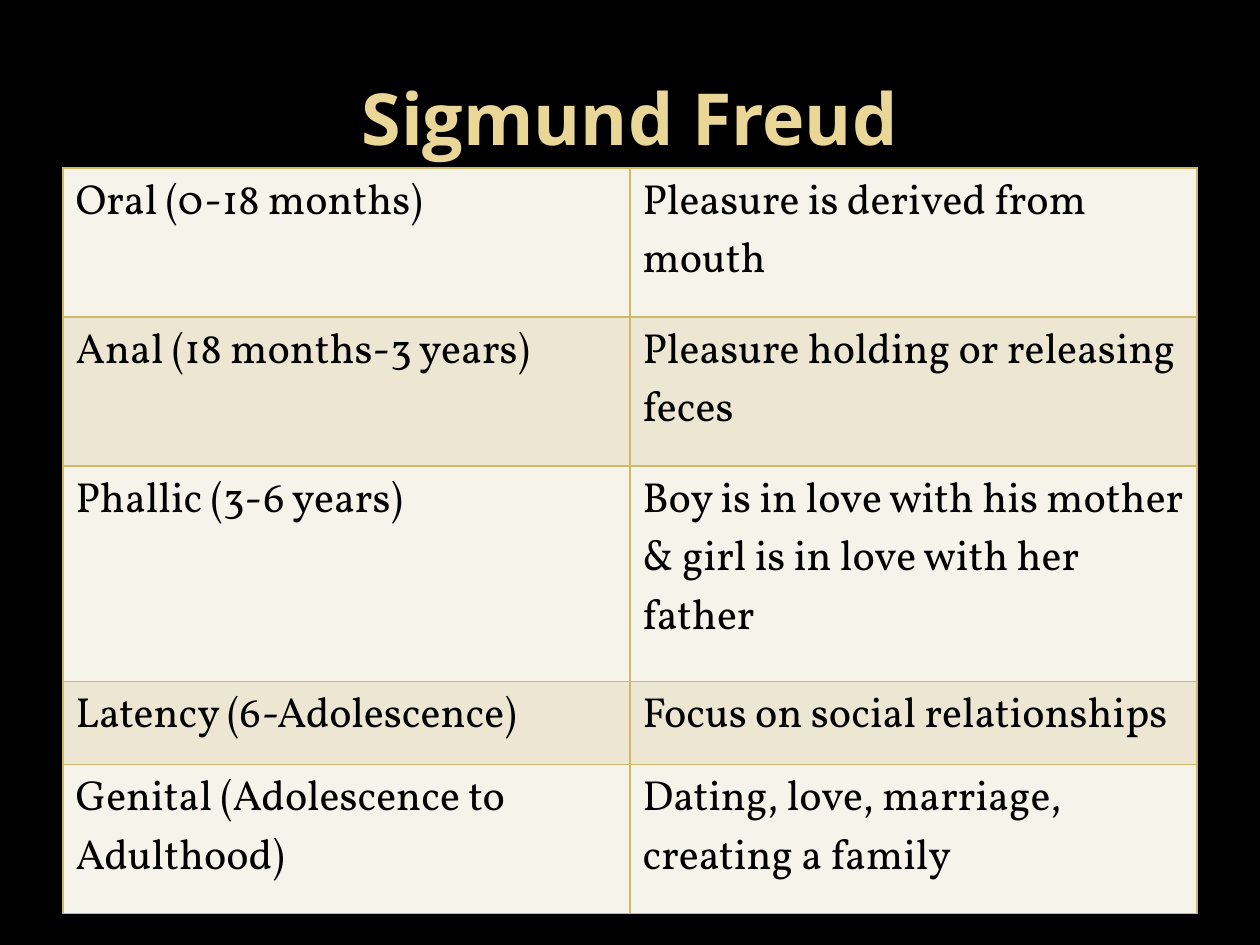
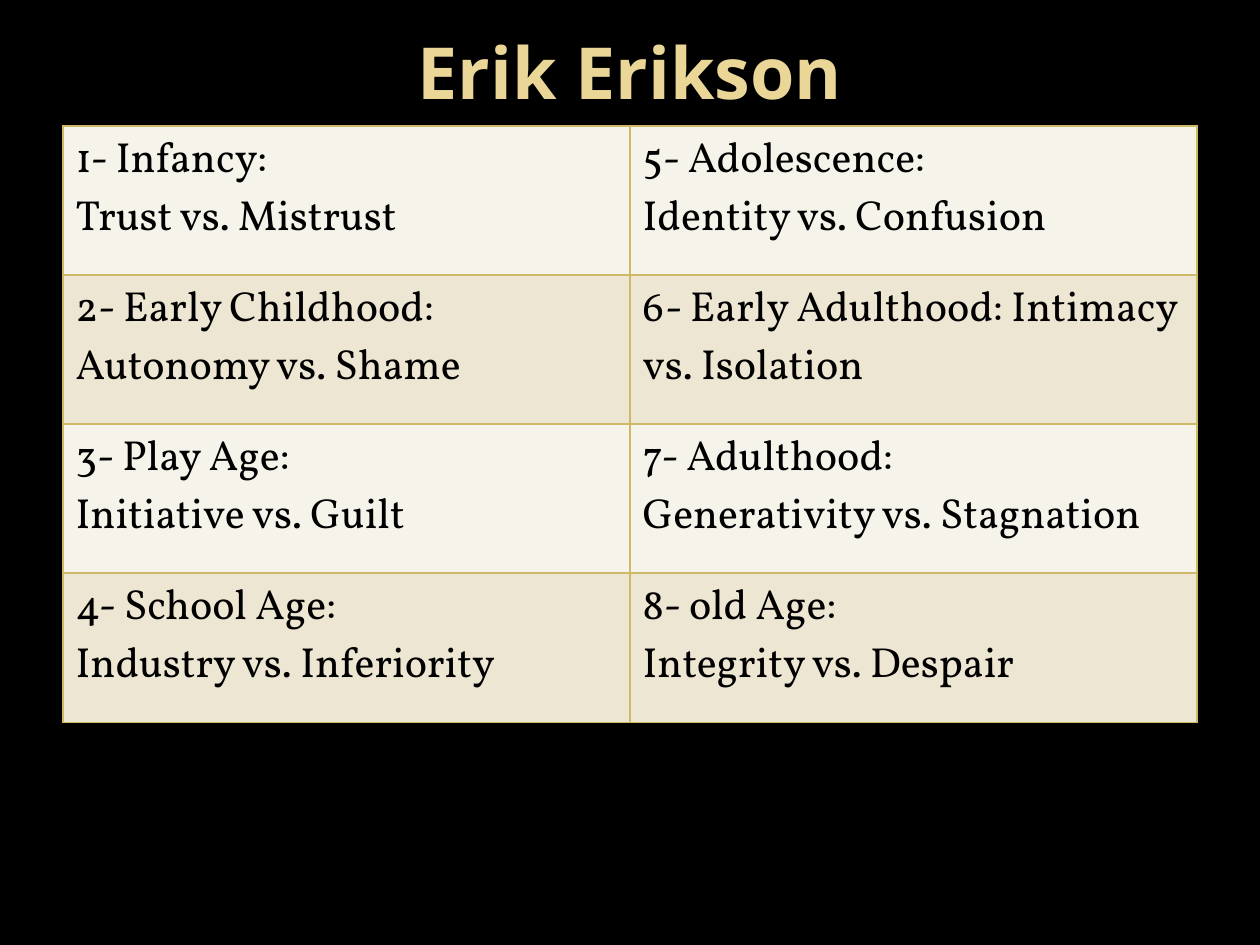
from lxml import etree
from pptx import Presentation
from pptx.dml.color import RGBColor
from pptx.enum import text
from pptx.oxml import ns
from pptx.util import Pt

BLACK = RGBColor(0x00, 0x00, 0x00)
TITLE_GOLD = RGBColor(0xEA, 0xD6, 0x96)
BORDER_GOLD = RGBColor(0xCE, 0xB9, 0x66)
BANDS = (RGBColor(0xF6, 0xF3, 0xEA), RGBColor(0xED, 0xE6, 0xD3))
TITLE_FONT, BODY_FONT = "Open Sans", "Vollkorn"
LEFT, WIDTH = 36, 648
ONE_LINE, TWO_LINES, THREE_LINES = 47.4, 85.2, 123.1

SLIDES = [
    {
        "title": "Sigmund Freud",
        "title_top": 21.6,
        "title_height": 90,
        "table_top": 96,
        "row_heights": [TWO_LINES, TWO_LINES, THREE_LINES, ONE_LINE, TWO_LINES],
        "rows": [
            ("Oral (0-18 months)", "Pleasure is derived from mouth"),
            ("Anal (18 months-3 years)", "Pleasure holding or releasing feces"),
            ("Phallic (3-6 years)",
             "Boy is in love with his mother & girl is in love with her father"),
            ("Latency (6-Adolescence)", "Focus on social relationships"),
            ("Genital (Adolescence to Adulthood)",
             "Dating, love, marriage, creating a family"),
        ],
    },
    {
        "title": "Erik Erikson",
        "title_top": 2.9,
        "title_height": 75.6,
        "table_top": 72,
        "row_heights": [TWO_LINES] * 4,
        "rows": [
            ("1- Infancy:\nTrust vs. Mistrust",
             "5- Adolescence:\nIdentity vs. Confusion"),
            ("2- Early Childhood: Autonomy vs. Shame",
             "6- Early Adulthood: Intimacy vs. Isolation"),
            ("3- Play Age:\nInitiative vs. Guilt",
             "7- Adulthood:\nGenerativity vs. Stagnation"),
            ("4- School Age:\nIndustry vs. Inferiority",
             "8- old Age:\nIntegrity vs. Despair"),
        ],
    },
]


def style_font(font, name, size, color, bold=False):
    font.name = name
    font.size = Pt(size)
    font.color.rgb = color
    font.bold = bold


def add_borders(cell):
    properties = cell._tc.get_or_add_tcPr()
    for position, side in enumerate(("a:lnL", "a:lnR", "a:lnT", "a:lnB")):
        line = etree.Element(ns.qn(side), w=str(Pt(1)))
        fill = etree.SubElement(line, ns.qn("a:solidFill"))
        etree.SubElement(fill, ns.qn("a:srgbClr"), val=str(BORDER_GOLD))
        properties.insert(position, line)


def format_title(title, content):
    title.left, title.width = Pt(LEFT), Pt(WIDTH)
    title.top, title.height = Pt(content["title_top"]), Pt(content["title_height"])
    frame = title.text_frame
    frame.text = content["title"]
    frame.auto_size = text.MSO_AUTO_SIZE.NONE
    frame.vertical_anchor = text.MSO_ANCHOR.MIDDLE
    paragraph = frame.paragraphs[0]
    paragraph.alignment = text.PP_ALIGN.CENTER
    style_font(paragraph.font, TITLE_FONT, 41, TITLE_GOLD, bold=True)


def add_stage_table(slide, content):
    rows, heights = content["rows"], content["row_heights"]
    table = slide.shapes.add_table(
        len(rows), len(rows[0]), Pt(LEFT), Pt(content["table_top"]),
        Pt(WIDTH), Pt(sum(heights))).table
    table.first_row = False
    table.horz_banding = False
    for row_index, (labels, height) in enumerate(zip(rows, heights)):
        table.rows[row_index].height = Pt(height)
        for column_index, label in enumerate(labels):
            cell = table.cell(row_index, column_index)
            cell.text = label
            cell.fill.solid()
            cell.fill.fore_color.rgb = BANDS[row_index % 2]
            add_borders(cell)
            for paragraph in cell.text_frame.paragraphs:
                style_font(paragraph.font, BODY_FONT, 24, BLACK)


def main():
    presentation = Presentation()
    presentation.slide_width, presentation.slide_height = Pt(720), Pt(540)
    background = presentation.slide_master.background.fill
    background.solid()
    background.fore_color.rgb = BLACK
    title_only = presentation.slide_layouts[5]
    for content in SLIDES:
        slide = presentation.slides.add_slide(title_only)
        format_title(slide.shapes.title, content)
        add_stage_table(slide, content)
    presentation.save("out.pptx")


if __name__ == "__main__":
    main()
